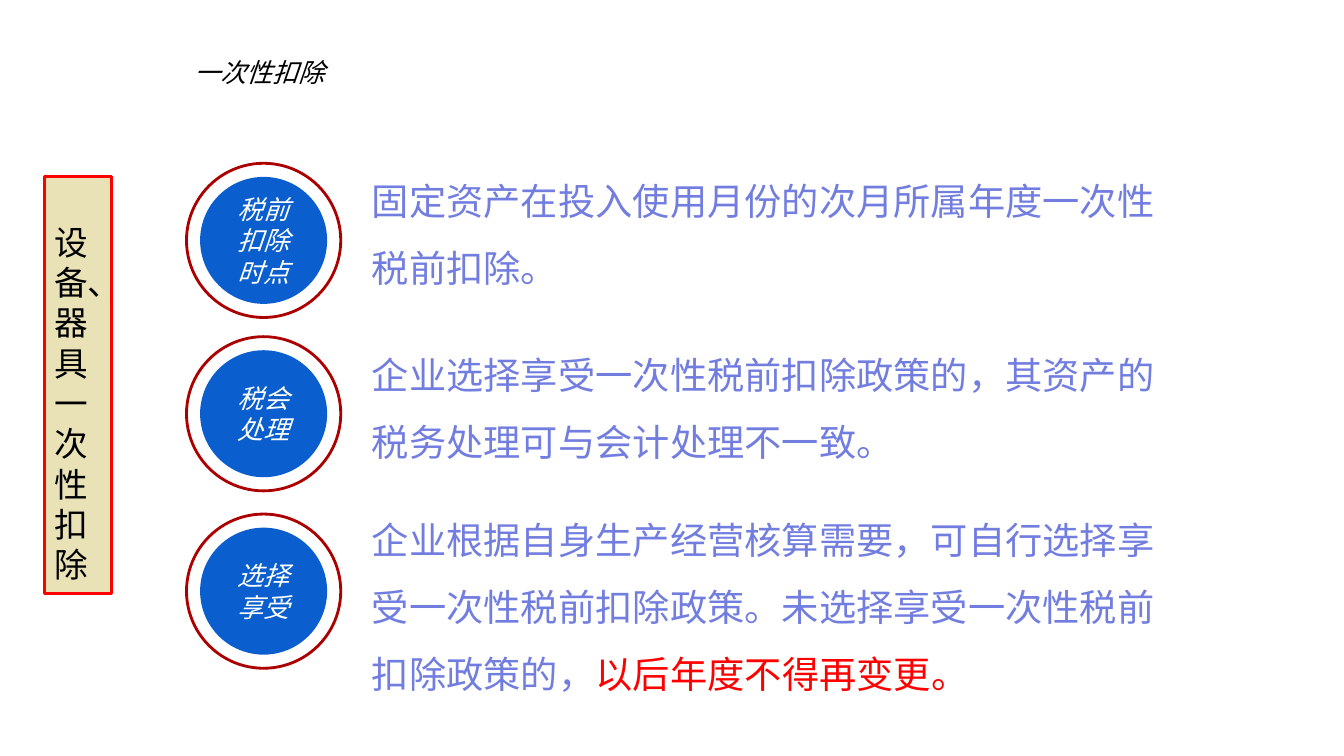
"""Build the slide on one-off deduction of equipment and tools."""
from lxml import etree
from pptx import Presentation
from pptx.dml.color import RGBColor
from pptx.enum.shapes import MSO_SHAPE
from pptx.enum.text import MSO_ANCHOR, PP_ALIGN
from pptx.oxml.ns import qn
from pptx.util import Inches, Pt

OVAL, RECTANGLE = MSO_SHAPE.OVAL, MSO_SHAPE.RECTANGLE
TOP, MIDDLE = MSO_ANCHOR.TOP, MSO_ANCHOR.MIDDLE
LEFT, CENTER = PP_ALIGN.LEFT, PP_ALIGN.CENTER

FONT = "Noto Sans CJK SC"
COLORS = {
    "disc": "0A5ECD", "ring": "AC0000", "body": "727DE0", "alert": "FF0000",
    "banner": "E9E2B6", "black": "000000", "white": "FFFFFF",
}
TITLE = "一次性扣除"
BANNER = "设备、器具一次性扣除"
TOPICS = [
    {"label": "税前扣除时点", "ring_top": 1.62, "text_box": (3.59, 1.5, 8.12, 1.45),
     "spans": [("固定资产在投入使用月份的次月所属年度一次性税前扣除。", "body")]},
    {"label": "税会处理", "ring_top": 3.34, "text_box": (3.59, 3.22, 8.15, 1.45),
     "spans": [("企业选择享受一次性税前扣除政策的，其资产的税务处理可与会计处理不一致。", "body")]},
    {"label": "选择享受", "ring_top": 5.1, "text_box": (3.59, 4.86, 8.12, 2.25),
     "spans": [("企业根据自身生产经营核算需要，可自行选择享受一次性税前扣除政策。"
                "未选择享受一次性税前扣除政策的，", "body"),
               ("以后年度不得再变更。", "alert")]},
]
RING_LEFT, RING_SIZE, DISC_SIZE = 1.85, 1.53, 1.26


def color(name):
    return RGBColor.from_string(COLORS[name])


def write(shape, spans, size, italic=False, align=LEFT, anchor=TOP, spacing=1.0):
    """Fill a shape with one paragraph of coloured spans."""
    frame = shape.text_frame
    frame.word_wrap = True
    frame.vertical_anchor = anchor
    para = frame.paragraphs[0]
    para.alignment, para.line_spacing = align, spacing
    font = para.font
    font.name, font.size, font.italic, font.bold = FONT, Pt(size), italic, False
    defaults = para._p.pPr.find(qn("a:defRPr"))
    etree.SubElement(defaults, qn("a:ea")).set("typeface", FONT)
    for text, name in spans:
        span = para.add_run()
        span.text = text
        span.font.color.rgb = color(name)
    return frame


def add_figure(page, kind, box, fill=None, line=None, width=0):
    """Add a flat preset shape."""
    shape = page.shapes.add_shape(kind, *map(Inches, box))
    shape.shadow.inherit = False
    if fill:
        shape.fill.solid()
        shape.fill.fore_color.rgb = color(fill)
    else:
        shape.fill.background()
    if line:
        shape.line.color.rgb = color(line)
        shape.line.width = Pt(width)
    else:
        shape.line.fill.background()
    return shape


def add_topic(page, topic):
    """Add a ringed label and its explanation."""
    gap = (RING_SIZE - DISC_SIZE) / 2
    top = topic["ring_top"]
    disc = add_figure(page, OVAL, (RING_LEFT + gap, top + gap, DISC_SIZE, DISC_SIZE), "disc")
    write(disc, [(topic["label"], "white")], 18.6, italic=True, align=CENTER, anchor=MIDDLE)
    add_figure(page, OVAL, (RING_LEFT, top, RING_SIZE, RING_SIZE), line="ring", width=2)
    box = page.shapes.add_textbox(*map(Inches, topic["text_box"]))
    write(box, topic["spans"], 26.6, spacing=1.5)


def main():
    """Assemble and save the deck."""
    deck = Presentation()
    deck.slide_width, deck.slide_height = Inches(13.33), Inches(7.5)
    page = deck.slides.add_slide(deck.slide_layouts[5])

    title = page.shapes.title
    title.left, title.top, title.width, title.height = map(Inches, (0.95, 0.39, 11.27, 0.58))
    frame = write(title, [(TITLE, "black")], 18.6, italic=True, anchor=MIDDLE)
    frame.margin_left, frame.margin_top, frame.margin_bottom = Inches(0.98), Inches(0.1), Inches(0.02)

    for topic in TOPICS:
        add_topic(page, topic)

    banner = add_figure(page, RECTANGLE, (0.44, 1.75, 0.67, 4.14), "banner", "alert", 2.25)
    write(banner, [(BANNER, "black")], 24).margin_top = Inches(0.45)

    deck.save("out.pptx")


if __name__ == "__main__":
    main()
